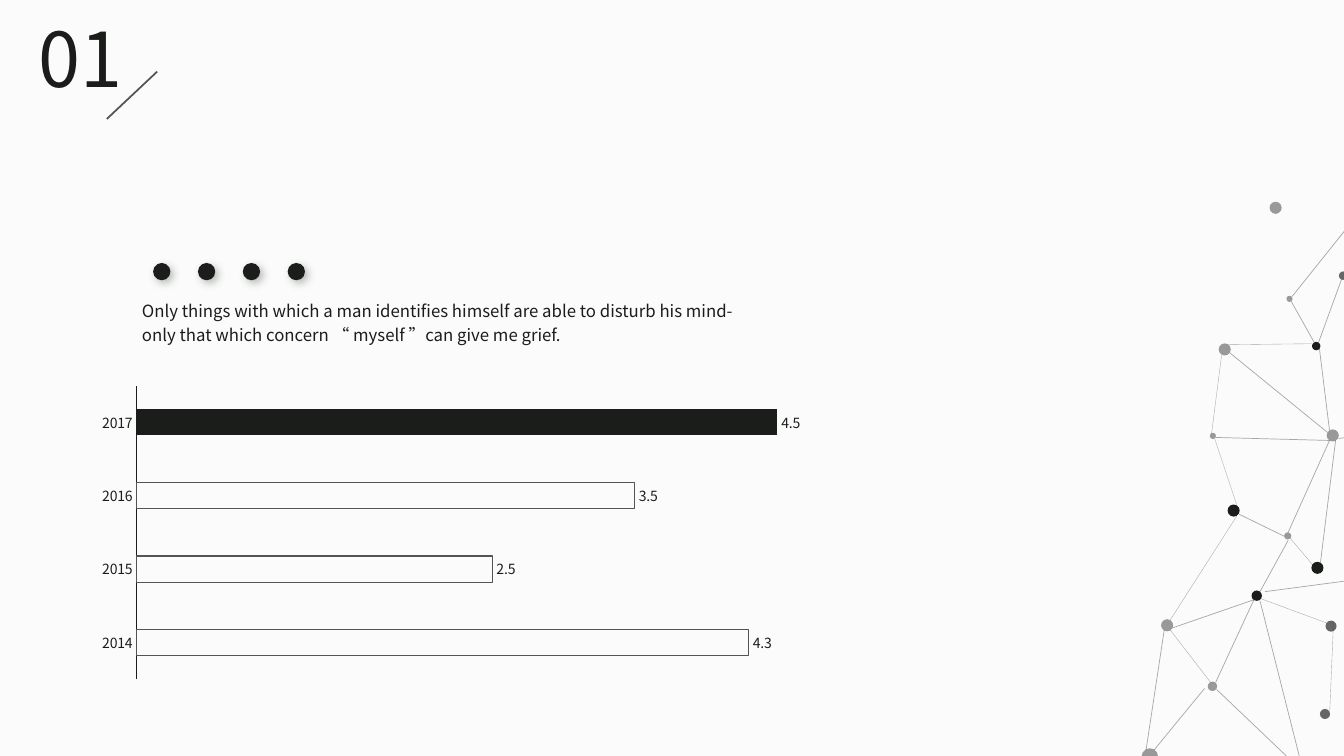
import pptx
import pptx.chart.data
import pptx.dml.color
import pptx.enum.chart
import pptx.enum.shapes
import pptx.enum.text
import pptx.oxml
import pptx.oxml.ns
import pptx.util
from dataclasses import dataclass
from lxml import etree

COLS, ROWS = 80, 45
CELL = pptx.util.Inches(1) / 6


@dataclass(frozen=True)
class Theme:
    font: str = "Noto Sans CJK SC"
    back: str = "FBFBFB"
    ink: str = "1A1D1A"
    line: str = "545454"
    mid: str = "666666"
    pale: str = "999999"
    shadow: str = "505950"
    number: float = 54
    body: float = 12
    label: float = 10
    hair: float = 0.25
    thin: float = 0.5
    axis: float = 0.75
    slash: float = 1.25


T = Theme()

# centre column, centre row, diameter, colour
NODES = [
    (79.95, 16.41, 0.5, T.mid), (75.93, 12.37, 0.72, T.pale),
    (72.9, 20.8, 0.72, T.pale), (73.43, 30.39, 0.72, T.ink),
    (72.2, 25.95, 0.36, T.pale), (76.76, 17.79, 0.36, T.pale),
    (78.42, 33.8, 0.72, T.ink), (79.33, 25.92, 0.72, T.pale),
    (78.35, 20.6, 0.5, T.ink), (76.65, 31.9, 0.42, T.pale),
    (79.23, 37.27, 0.66, T.mid), (78.87, 42.5, 0.6, T.mid),
    (69.47, 37.22, 0.72, T.pale), (72.17, 40.85, 0.56, T.pale),
    (68.44, 45.03, 0.98, T.pale), (74.81, 35.46, 0.62, T.ink),
]

# start column and row, end column and row
EDGES = {
    T.hair: [
        (79.14, 42.66, 79.38, 36.96), (72.3, 26.1, 73.62, 30.06),
        (72.72, 21.12, 72.12, 25.8), (78.12, 20.46, 73.08, 20.52),
        (78.12, 33.6, 76.8, 32.04), (73.62, 30.72, 69.66, 36.9),
        (69.66, 37.5, 72.06, 40.62), (75.06, 35.64, 78.96, 37.08),
    ],
    T.thin: [
        (69.3, 37.5, 68.22, 44.64), (69.78, 37.38, 74.64, 35.7),
        (78.6, 33.48, 79.5, 26.22), (76.68, 31.68, 79.14, 26.22),
        (78.48, 20.4, 79.86, 16.62), (76.92, 17.64, 80.28, 13.44),
        (73.2, 21, 79.02, 25.74), (79.68, 26.1, 83.1, 25.68),
        (80.28, 34.56, 75.3, 35.22), (75, 35.76, 77.58, 45.96),
        (72.36, 26.04, 79.14, 26.22), (73.74, 30.6, 76.44, 31.92),
        (78.54, 20.76, 79.14, 25.62), (76.86, 17.94, 78.24, 20.4),
        (76.68, 32.16, 75, 35.22), (71.7, 40.98, 68.7, 44.64),
        (77.58, 45.96, 72.42, 41.04), (74.64, 35.7, 72.36, 40.62),
    ],
}


def grid(*cells):
    return [round(c * CELL) for c in cells]


def rgb(color):
    return pptx.dml.color.RGBColor.from_string(color)


def add_xml(parent, xml):
    """Append an element, declaring the namespaces on its opening tag."""
    ns = pptx.oxml.ns.nsdecls("a", "c")
    tag, rest = xml.split(" ", 1)
    parent.append(pptx.oxml.parse_xml(f"{tag} {ns} {rest}"))


def set_font(font, size, color=T.ink):
    font.name, font.size = T.font, pptx.util.Pt(size)
    font.color.rgb = rgb(color)


def write(s, text, *, size, align=None, spacing=None, wrap=True):
    tf = s.text_frame
    tf.word_wrap = wrap
    tf.auto_size = pptx.enum.text.MSO_AUTO_SIZE.NONE
    tf.vertical_anchor = pptx.enum.text.MSO_ANCHOR.TOP
    p = tf.paragraphs[0]
    p.alignment, p.line_spacing = align, spacing
    r = p.add_run()
    r.text = text
    set_font(r.font, size)
    add_xml(r.font._element, f'<a:ea typeface="{T.font}"/>')


def add_dot(sp, col, row, size, color, shadow=False):
    """Draw a circle about its centre."""
    box = grid(col - size / 2, row - size / 2, size, size)
    s = sp.add_shape(pptx.enum.shapes.MSO_SHAPE.OVAL, *box)
    s.shadow.inherit = False
    s.fill.solid()
    s.fill.fore_color.rgb = rgb(color)
    s.line.fill.background()
    if shadow:
        effects = s._element.spPr.find(pptx.oxml.ns.qn("a:effectLst"))
        add_xml(effects, '<a:outerShdw blurRad="76200" dist="38100" dir="2700000" algn="tl" '
                f'rotWithShape="0"><a:srgbClr val="{T.shadow}"><a:alpha val="40000"/>'
                '</a:srgbClr></a:outerShdw>')


def add_line(sp, ends, width, alpha=None):
    s = sp.add_connector(pptx.enum.shapes.MSO_CONNECTOR.STRAIGHT, *grid(*ends))
    s.line.width = pptx.util.Pt(width)
    s.line.color.rgb = rgb(T.line)
    if alpha:
        color = s._element.spPr.find(".//" + pptx.oxml.ns.qn("a:srgbClr"))
        add_xml(color, f'<a:alpha val="{alpha * 1000}"/>')
    etree.SubElement(s._element.spPr, pptx.oxml.ns.qn("a:effectLst"))


def add_bars(sp, values, highlight):
    data = pptx.chart.data.CategoryChartData()
    data.categories = list(values)
    data.add_series("Series 1", list(values.values()))
    kind = pptx.enum.chart.XL_CHART_TYPE.BAR_CLUSTERED
    chart = sp.add_chart(kind, *grid(2.28, 21.42, 48.72, 19.2), data).chart
    chart.has_legend = chart.has_title = False
    set_font(chart.font, T.label)

    axis = chart.category_axis
    axis.major_tick_mark = pptx.enum.chart.XL_TICK_MARK.NONE
    axis.format.line.color.rgb = rgb(T.ink)
    axis.format.line.width = pptx.util.Pt(T.axis)
    scale = chart.value_axis
    scale.minimum_scale, scale.maximum_scale = 0, 5
    scale.has_major_gridlines = scale.visible = False

    plot = chart.plots[0]
    plot.gap_width, plot.vary_by_categories = 182, False
    plot.has_data_labels = True
    labels = plot.data_labels
    labels.show_value = True
    labels.position = pptx.enum.chart.XL_LABEL_POSITION.OUTSIDE_END
    set_font(labels.font, T.label)
    for i, year in enumerate(values):
        bar = plot.series[0].points[i].format
        if year == highlight:
            bar.fill.solid()
            bar.fill.fore_color.rgb = rgb(T.ink)
            bar.line.fill.background()
        else:
            bar.fill.background()
            bar.line.color.rgb = rgb(T.line)
            bar.line.width = pptx.util.Pt(T.axis)

    area = chart._chartSpace.chart.plotArea
    for old in area.findall(pptx.oxml.ns.qn("c:layout")):
        area.remove(old)
    frame = "".join(f'<c:{k} val="{v}"/>' for k, v in (
        ("layoutTarget", "inner"), ("xMode", "edge"), ("yMode", "edge"),
        ("x", 0.12), ("y", 0.08), ("w", 0.87), ("h", 0.91)))
    add_xml(area, f"<c:layout ><c:manualLayout>{frame}</c:manualLayout></c:layout>")
    area.insert(0, area[-1])


def add_network(sp):
    for node in NODES:
        add_dot(sp, *node)
    for width, edges in EDGES.items():
        for ends in edges:
            add_line(sp, ends, width, alpha=50)


def main():
    prs = pptx.Presentation()
    prs.slide_width, prs.slide_height = grid(COLS, ROWS)
    slide = prs.slides.add_slide(prs.slide_layouts[5])
    slide.background.fill.solid()
    slide.background.fill.fore_color.rgb = rgb(T.back)
    sp = slide.shapes

    s = sp.title
    s.left, s.top, s.width, s.height = grid(1.68, 0.42, 6.84, 6.06)
    write(s, "01", size=T.number, align=pptx.enum.text.PP_ALIGN.JUSTIFY, wrap=False)
    add_line(sp, (9.36, 4.26, 6.36, 7.08), T.slash)

    add_bars(sp, {"2014": 4.3, "2015": 2.5, "2016": 3.5, "2017": 4.5}, highlight="2017")
    add_network(sp)

    write(sp.add_textbox(*grid(7.86, 17.34, 37.86, 3.54)),
          "Only things with which a man identifies himself are able to disturb his "
          "mind-only that which concern “ myself ”can give me grief.",
          size=T.body, spacing=1.2)
    for i in range(4):
        add_dot(sp, 9.63 + 2.67 * i, 16.17, 1.03, T.ink, shadow=True)

    prs.save("out.pptx")


if __name__ == "__main__":
    main()
